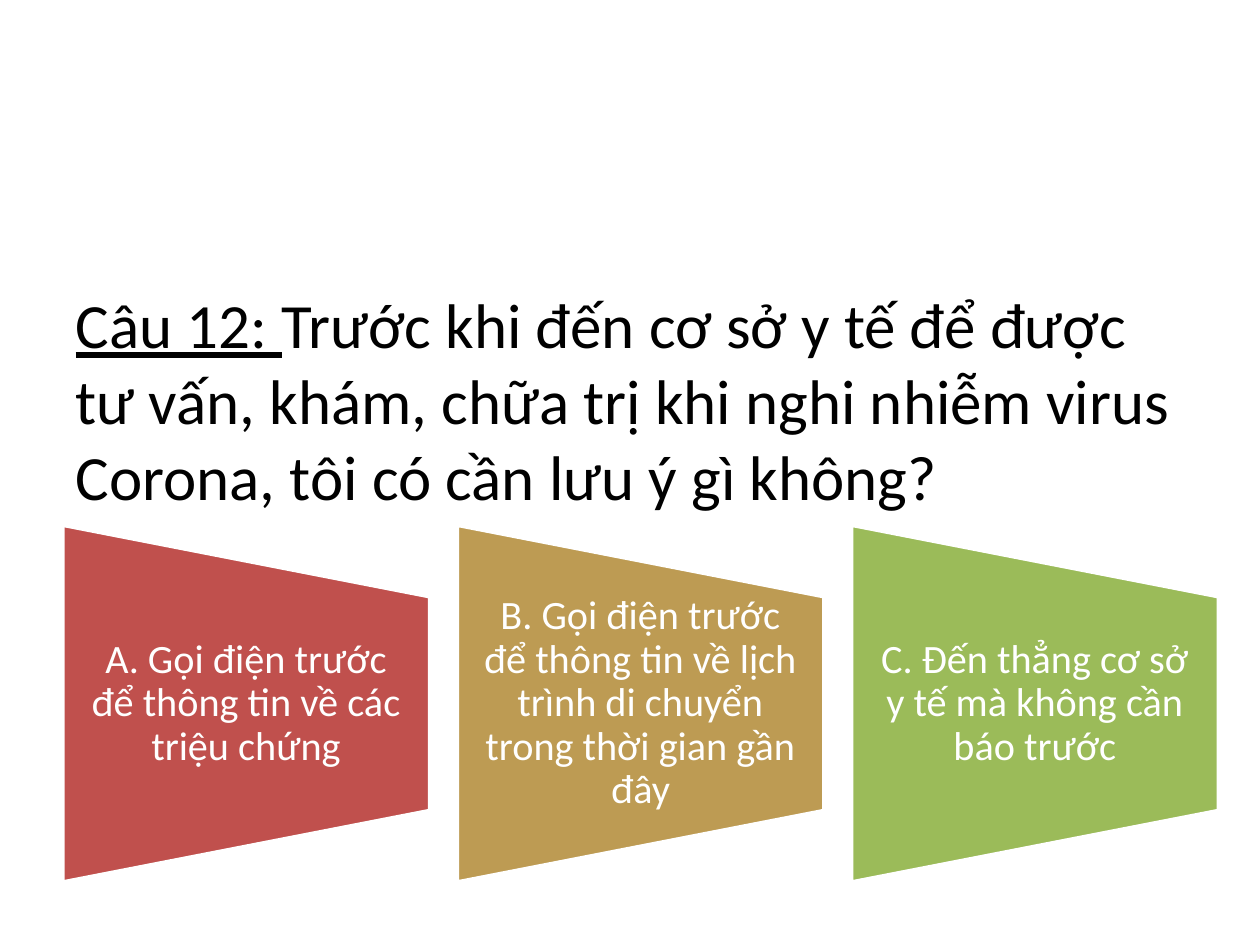
from dataclasses import dataclass

from pptx import Presentation
from pptx.dml.color import RGBColor
from pptx.enum import text
from pptx.util import Cm, Pt

QUESTION = (
    ("Câu 12: ", True),
    ("Trước khi đến cơ sở y tế để được tư vấn, khám, chữa trị khi nghi nhiễm "
     "virus Corona, tôi có cần lưu ý gì không?", False),
)
ANSWERS = (
    ("A. Gọi điện trước để thông tin về các triệu chứng", "C0504D"),
    ("B. Gọi điện trước để thông tin về lịch trình di chuyển "
     "trong thời gian gần đây", "BD9B53"),
    ("C. Đến thẳng cơ sở y tế mà không cần báo trước", "9BBB59"),
)


@dataclass(frozen=True)
class Theme:
    font: str = "Calibri"
    question_size: int = 36
    answer_size: int = 23
    dark: str = "000000"
    light: str = "FFFFFF"


THEME = Theme()
LEFT, ANSWER_TOP = Cm(1.27), Cm(10.59)
ANSWER_WIDTH, ANSWER_HEIGHT = Cm(7.39), Cm(7.19)
PITCH = Cm(7.95)
TAPER = Cm(1.44)
SIDE_INSET = Cm(0.41)


def style(font, size, color):
    font.name = THEME.font
    font.size = Pt(size)
    font.color.rgb = RGBColor.from_string(color)


def add_question(slide):
    title = slide.shapes.title
    title.left, title.top = LEFT, Cm(5.51)
    title.width, title.height = Cm(23.06), Cm(5.08)
    frame = title.text_frame
    frame.word_wrap = True
    frame.auto_size = text.MSO_AUTO_SIZE.NONE
    frame.vertical_anchor = text.MSO_ANCHOR.MIDDLE
    paragraph = frame.paragraphs[0]
    paragraph.alignment = text.PP_ALIGN.LEFT
    for wording, underlined in QUESTION:
        run = paragraph.add_run()
        run.text = wording
        style(run.font, THEME.question_size, THEME.dark)
        run.font.underline = underlined


def add_answer(slide, left, wording, color):
    """Add a panel that narrows towards its right side."""
    right, bottom = left + ANSWER_WIDTH, ANSWER_TOP + ANSWER_HEIGHT
    outline = slide.shapes.build_freeform(left, bottom)
    outline.add_line_segments([
        (left, ANSWER_TOP),
        (right, ANSWER_TOP + TAPER),
        (right, bottom - TAPER),
    ], close=True)
    panel = outline.convert_to_shape()
    panel.shadow.inherit = False
    panel.fill.solid()
    panel.fill.fore_color.rgb = RGBColor.from_string(color)
    panel.line.color.rgb = RGBColor.from_string(THEME.light)
    panel.line.width = Pt(2)

    frame = panel.text_frame
    frame.text = wording
    frame.word_wrap = True
    frame.vertical_anchor = text.MSO_ANCHOR.MIDDLE
    frame.margin_left = frame.margin_right = SIDE_INSET
    frame.margin_top = frame.margin_bottom = TAPER
    paragraph = frame.paragraphs[0]
    paragraph.alignment = text.PP_ALIGN.CENTER
    paragraph.line_spacing = 0.9
    style(paragraph.runs[0].font, THEME.answer_size, THEME.light)


def main():
    deck = Presentation()
    deck.slide_width, deck.slide_height = Cm(25.4), Cm(19.05)
    slide = deck.slides.add_slide(deck.slide_layouts.get_by_name("Title Only"))
    add_question(slide)
    for column, (wording, color) in enumerate(ANSWERS):
        add_answer(slide, LEFT + column * PITCH, wording, color)
    deck.save("out.pptx")


if __name__ == "__main__":
    main()
